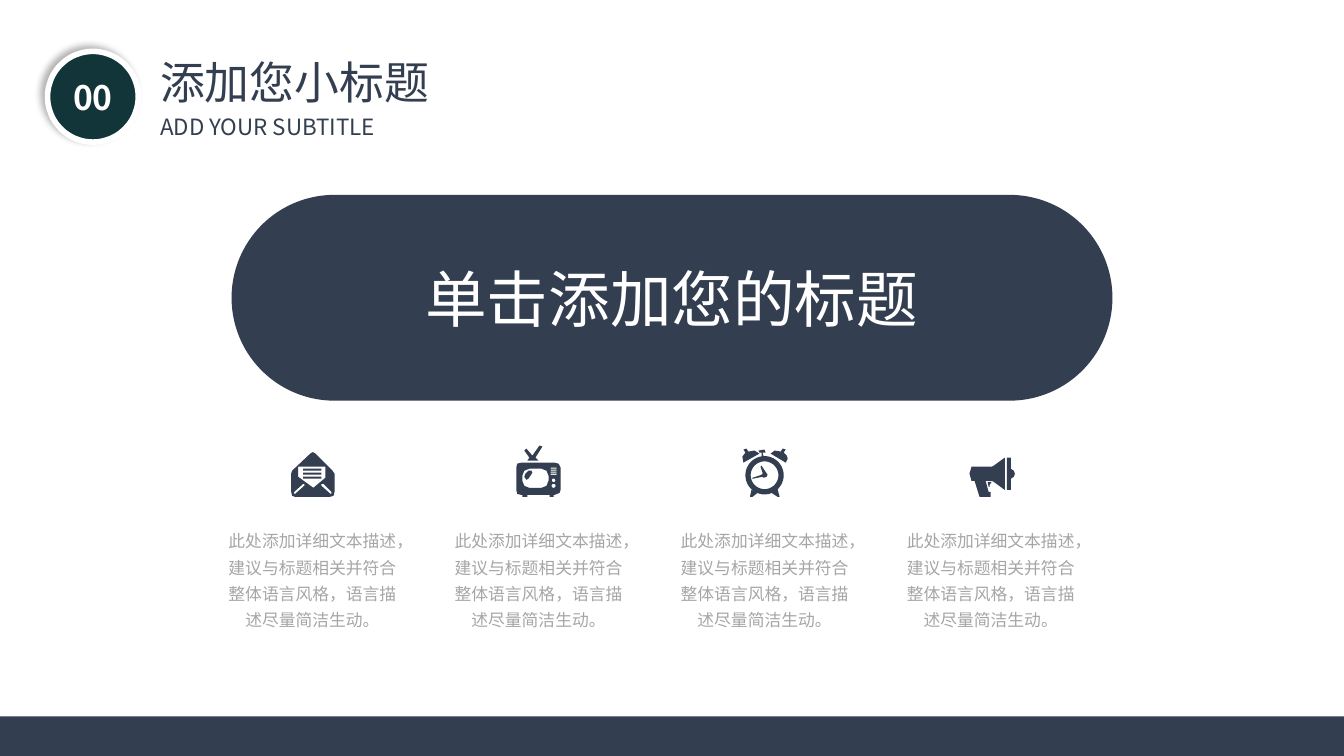
"""Build a title slide with a numbered badge, a banner and four icon columns."""
from math import cos, radians, sin

from lxml.etree import SubElement
from pptx import Presentation
from pptx.dml.color import RGBColor
from pptx.enum.shapes import MSO_SHAPE
from pptx.enum.text import MSO_ANCHOR, MSO_AUTO_SIZE, PP_ALIGN
from pptx.oxml.ns import qn
from pptx.util import Pt

FONT = "Noto Sans CJK SC"
NAVY, GREEN, GRAY, WHITE = "333E50", "123539", "A6A6A6", "FFFFFF"
DESCRIPTION = "此处添加详细文本描述，建议与标题相关并符合整体语言风格，语言描述尽量简洁生动。"
HEADINGS = [
    ("单击添加您的标题", (236, 183, 488, 60.5), 44, WHITE, PP_ALIGN.CENTER, True),
    ("ADD YOUR SUBTITLE", (107.3, 77, 176.4, 26.6), 16, NAVY, PP_ALIGN.LEFT, False),
    ("添加您小标题", (107.3, 35.3, 244, 46), 32, NAVY, PP_ALIGN.LEFT, True),
]
COLUMN_PITCH = 161.5
ICON_LEFT, ICON_TOP, ICON_UNIT = 208, 318.25, 0.72
DESCRIPTION_BOX = (150.5, 371.5, 145.4, 81.4)


def bar(left, top, right, bottom):
    return [(left, top), (right, top), (right, bottom), (left, bottom)]


def disc(center_x, center_y, radius, steps=48):
    angles = [radians(360 * step / steps) for step in range(steps)]
    return [(center_x + radius * cos(a), center_y + radius * sin(a)) for a in angles]


ENVELOPE = [
    [(41, 25), (43, 28), (43, 46), (42, 50), (38, 51), (4, 51), (1, 50), (0, 46),
     (0, 28), (1, 25), (19, 8), (21.5, 6.5), (24, 8)],
    [(7, 21), (7, 31), (22, 42), (34, 32), (34, 21)],
    *[bar(12, top, 30, top + 2) for top in (23, 27, 31)],
    [(4, 48), (13, 40), (13, 38), (12, 38), (3, 46), (3, 48)],
    [(40, 46), (32, 38), (30, 38), (30, 40), (39, 48), (40, 48)],
]
TELEVISION = [
    [(4, 17), (37, 17), (41, 18), (43, 22), (43, 44), (42, 47), (37, 49), (36, 49),
     (36, 51), (32, 51), (32, 49), (10, 49), (10, 51), (5, 51), (5, 49), (4, 49),
     (0, 48), (-1, 44), (-1, 22), (0, 18)],
    [(9, 3), (15, 10), (22, 0), (25, 1), (18, 12), (21, 15), (10, 15), (12, 12), (7, 5)],
    [(12, 23), (24, 23), (29, 25), (31, 30), (31, 35), (29, 40), (24, 42),
     (12, 42), (7, 40), (5, 35), (5, 30), (7, 25)],
    [(14, 25), (11, 25), (8, 28), (7, 31), (9, 34), (11, 33), (13, 30), (15, 27)],
    disc(36, 40, 2), disc(36, 34.5, 1.75),
    *[bar(33, top, 39, top + 1) for top in (22, 24, 26, 28)],
]
ALARM_CLOCK = [
    disc(21, 29.5, 19), disc(21, 29.5, 13.75),
    [(19, 28), (18, 29), (9, 32), (9, 33), (19, 31), (20, 32), (23, 31), (24, 29),
     (22, 26), (18, 20), (17, 21), (19, 27)],
    [(18, 11), (18, 7), (16, 7), (15, 5), (21, 4), (22, 7), (19, 7), (20, 10.5)],
    [(5, 6), (3, 3), (0, 4), (2, 7), (-1, 11), (0, 17), (16, 8), (11, 5)],
    [(37, 6), (31, 5), (27, 8), (42, 17), (44, 13), (43, 10), (40, 7), (42, 4), (39, 3)],
    [(8, 44), (6.5, 51), (9, 51), (14, 47), (11, 46)],
    [(34, 43.5), (36, 51), (34, 51), (28, 47), (31, 46)],
]
MEGAPHONE = [
    [(2, 21), (22, 21), (24, 20), (35, 12), (35, 44), (24, 36), (22, 35), (16, 35),
     (19, 46), (21, 46), (21, 51), (10, 51), (5, 35), (2, 35), (0, 28)],
    [(41, 23), (44, 25), (45, 28), (44, 31), (41, 33), (41, 44), (37, 44), (37, 12), (41, 12)],
    [(22, 36), (18, 36), (19, 41), (20, 41), (20, 39)],
]
ICONS = [ENVELOPE, TELEVISION, ALARM_CLOCK, MEGAPHONE]


def color(hex_string):
    return RGBColor.from_string(hex_string)


def paint(shape, fill):
    shape.shadow.inherit = False
    shape.fill.solid()
    shape.fill.fore_color.rgb = color(fill)
    shape.line.fill.background()
    return shape


def add_block(slide, kind, box, fill):
    return paint(slide.shapes.add_shape(kind, *map(Pt, box)), fill)


def write(shape, text, size, fill, align, spacing=None, bold=False):
    paragraph = shape.text_frame.paragraphs[0]
    for name, value in {"alignment": align, "line_spacing": spacing}.items():
        setattr(paragraph, name, value)
    run = paragraph.add_run()
    run.text = text
    for name, value in {"name": FONT, "size": Pt(size), "bold": bold}.items():
        setattr(run.font, name, value)
    run.font.color.rgb = color(fill)
    SubElement(run.font._element, qn("a:ea"), typeface=FONT)


def add_text(slide, text, box, size, fill, align, wrap=True, spacing=None):
    shape = slide.shapes.add_textbox(*map(Pt, box))
    frame_format = {"word_wrap": wrap, "auto_size": MSO_AUTO_SIZE.SHAPE_TO_FIT_TEXT}
    for name, value in frame_format.items():
        setattr(shape.text_frame, name, value)
    write(shape, text, size, fill, align, spacing)


def add_icon(slide, contours, left):
    def place(point):
        return Pt(left + point[0] * ICON_UNIT), Pt(ICON_TOP + point[1] * ICON_UNIT)

    builder = slide.shapes.build_freeform(*place(contours[0][0]))
    for contour in contours:
        builder.move_to(*place(contour[0]))
        builder.add_line_segments([place(point) for point in contour[1:]], close=True)
    paint(builder.convert_to_shape(), NAVY)


def add_badge(slide):
    badge = add_block(slide, MSO_SHAPE.OVAL, (34, 36.7, 64.8, 64.8), GREEN)
    badge.line.color.rgb = color(WHITE)
    badge.line.width = Pt(4)
    effects = badge._element.spPr.find(qn("a:effectLst"))
    shadow = SubElement(effects, qn("a:outerShdw"), blurRad=str(Pt(5.1)), dist=str(Pt(4)),
                        dir=str(215 * 60000), algn="ctr", rotWithShape="0")
    shade = SubElement(shadow, qn("a:srgbClr"), val="000000")
    SubElement(shade, qn("a:alpha"), val="30000")
    frame_format = {"vertical_anchor": MSO_ANCHOR.MIDDLE, "word_wrap": True}
    for name, value in frame_format.items():
        setattr(badge.text_frame, name, value)
    write(badge, "00", 24, WHITE, PP_ALIGN.CENTER, bold=True)


def main():
    presentation = Presentation()
    presentation.slide_width, presentation.slide_height = Pt(960), Pt(540)
    slide = presentation.slides.add_slide(presentation.slide_layouts[6])
    add_block(slide, MSO_SHAPE.RECTANGLE, (0, 511.7, 960, 28.3), NAVY)
    banner = add_block(slide, MSO_SHAPE.ROUNDED_RECTANGLE, (165.4, 139.2, 629.2, 147), NAVY)
    banner.adjustments[0] = 0.5
    text_left, *text_box = DESCRIPTION_BOX
    for column, icon in enumerate(ICONS):
        offset = column * COLUMN_PITCH
        add_icon(slide, icon, ICON_LEFT + offset)
        add_text(slide, DESCRIPTION, (text_left + offset, *text_box), 12, GRAY,
                 PP_ALIGN.CENTER, spacing=1.3)
    for heading in HEADINGS:
        add_text(slide, *heading)
    add_badge(slide)
    presentation.save("out.pptx")


if __name__ == "__main__":
    main()
